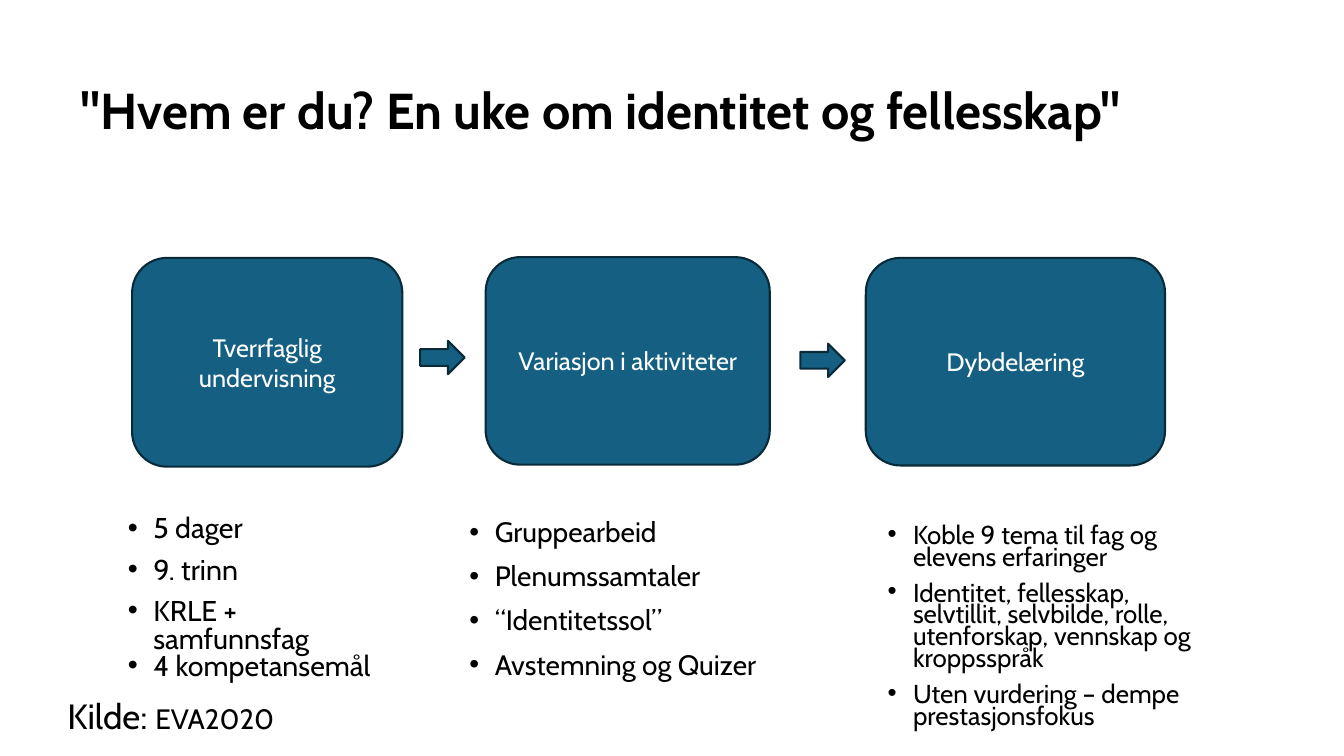
from lxml.etree import SubElement
from pptx import Presentation
from pptx.dml.color import RGBColor
from pptx.enum.shapes import MSO_SHAPE as Shape
from pptx.enum.text import MSO_ANCHOR as Anchor, MSO_AUTO_SIZE as AutoSize, PP_ALIGN as Align
from pptx.oxml.ns import qn
from pptx.util import Cm, Pt


def color(hex_string):
    return RGBColor.from_string(hex_string)


class SlideBuilder:
    font_name = "Cabin"
    ink = "000000"
    fill = "156082"
    outline = "092A39"
    light = "FFFFFF"
    indent = Cm(0.64)

    def __init__(self, presentation):
        self.slide = presentation.slides.add_slide(presentation.slide_layouts[1])
        self.shapes = self.slide.shapes

    def style(self, font, size, hex_string, bold=False):
        font.name = self.font_name
        font.size = Pt(size)
        font.bold = bold
        font.color.rgb = color(hex_string)

    def place(self, shape, box):
        shape.left, shape.top, shape.width, shape.height = map(Cm, box)

    def title(self, text, box):
        shape = self.shapes.title
        self.place(shape, box)
        frame = shape.text_frame
        frame.text = text
        frame.auto_size = AutoSize.NONE
        frame.vertical_anchor = Anchor.MIDDLE
        paragraph = frame.paragraphs[0]
        paragraph.alignment = Align.LEFT
        paragraph.line_spacing = 0.9
        self.style(paragraph.font, 36, self.ink, bold=True)

    def text_box(self, box):
        shape = self.shapes.add_textbox(*map(Cm, box))
        shape.text_frame.word_wrap = True
        return shape

    def bullets(self, shape, items, size, line_spacing, tight_items=()):
        frame = shape.text_frame
        frame.auto_size = AutoSize.NONE
        frame.vertical_anchor = Anchor.TOP
        frame.text = "\n".join(items)
        for index, paragraph in enumerate(frame.paragraphs):
            properties = paragraph._p.get_or_add_pPr()
            properties.set("marL", str(self.indent))
            properties.set("indent", str(-self.indent))
            SubElement(properties, qn("a:buFont")).set("typeface", "Arial")
            SubElement(properties, qn("a:buChar")).set("char", "•")
            paragraph.line_spacing = line_spacing
            paragraph.space_before = Pt(0 if index == 0 or index in tight_items else 10)
            self.style(paragraph.font, size, self.ink)

    def block(self, kind, box, text=""):
        shape = self.shapes.add_shape(kind, *map(Cm, box))
        shape.shadow.inherit = False
        shape.fill.solid()
        shape.fill.fore_color.rgb = color(self.fill)
        shape.line.color.rgb = color(self.outline)
        shape.line.width = Pt(1.5)
        if text:
            frame = shape.text_frame
            frame.text = text
            frame.vertical_anchor = Anchor.MIDDLE
            paragraph = frame.paragraphs[0]
            paragraph.alignment = Align.CENTER
            self.style(paragraph.font, 18, self.light)

    def source(self, label, name, box):
        paragraph = self.text_box(box).text_frame.paragraphs[0]
        for text, size in ((label, 25), (name, 20)):
            run = paragraph.add_run()
            run.text = text
            self.style(run.font, size, self.ink)


def main():
    presentation = Presentation()
    presentation.slide_width = Cm(33.87)
    presentation.slide_height = Cm(19.05)
    builder = SlideBuilder(presentation)

    builder.title('"Hvem er du? En uke om identitet og fellesskap"', (1.78, 1.02, 32.08, 3.68))

    facts = builder.slide.placeholders[1]
    builder.place(facts, (2.97, 12.9, 7.16, 4.34))
    builder.bullets(
        facts,
        ["5 dager", "9. trinn", "KRLE + samfunnsfag", "4 kompetansemål"],
        20.4, 0.8, tight_items=(3,),
    )

    for text, box in (
        ("Tverrfaglig undervisning", (3.33, 6.5, 6.81, 5.26)),
        ("Variasjon i aktiviteter", (12.24, 6.48, 7.16, 5.23)),
        ("Dybdelæring", (21.82, 6.5, 7.54, 5.23)),
    ):
        builder.block(Shape.ROUNDED_RECTANGLE, box, text)

    for left, top in ((10.59, 8.59), (20.17, 8.66)):
        builder.block(Shape.RIGHT_ARROW, (left, top, 1.12, 0.84))

    builder.source("Kilde: ", "EVA2020", (1.45, 17.37, 27.25, 1.32))

    builder.bullets(
        builder.text_box((11.58, 12.93, 8.94, 5.63)),
        ["Gruppearbeid", "Plenumssamtaler", "“Identitetssol”", "Avstemning og Quizer"],
        20, 0.9,
    )
    builder.bullets(
        builder.text_box((22.12, 13.16, 8.94, 5.61)),
        [
            "Koble 9 tema til fag og elevens erfaringer",
            "Identitet, fellesskap, selvtillit, selvbilde, rolle, "
            "utenforskap, vennskap og kroppsspråk",
            "Uten vurdering – dempe prestasjonsfokus",
        ],
        18.5, 0.7,
    )

    presentation.save("out.pptx")


if __name__ == "__main__":
    main()
